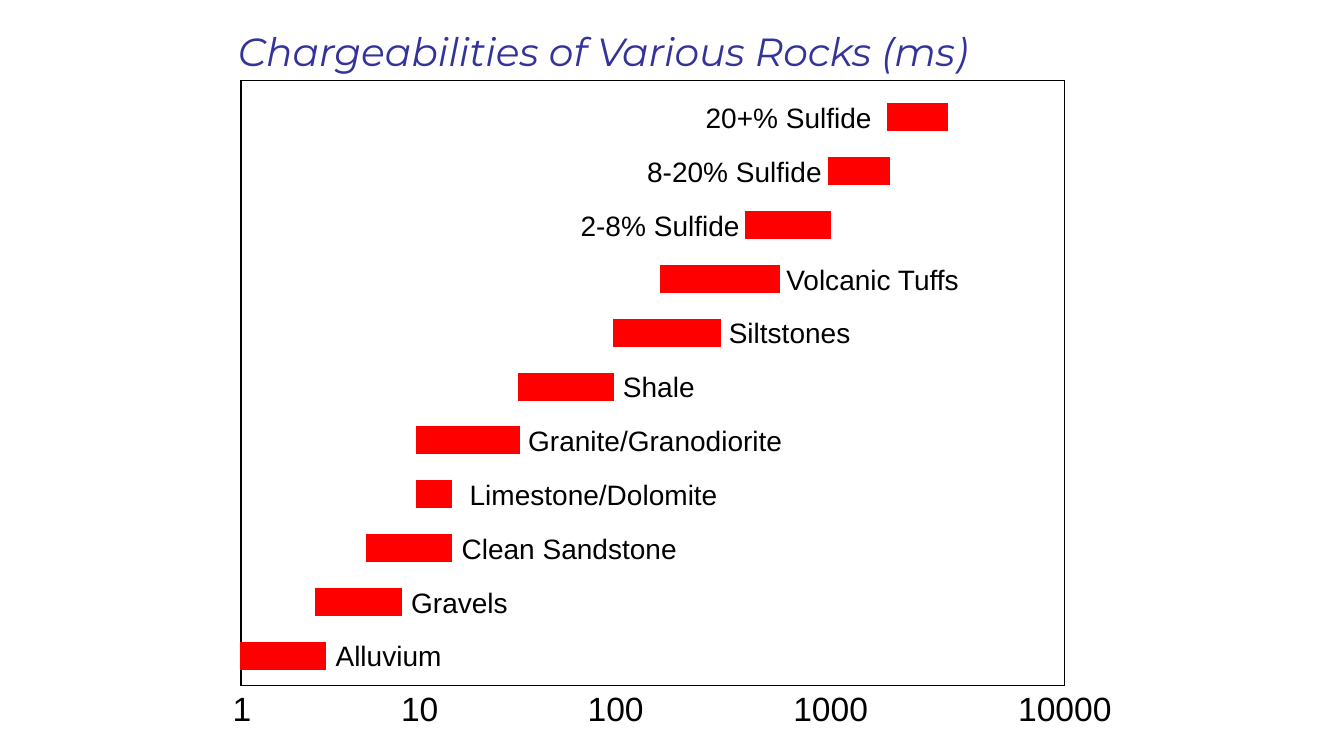
from dataclasses import dataclass

from lxml.etree import SubElement
from pptx import Presentation
from pptx.dml.color import RGBColor
from pptx.enum.shapes import MSO_SHAPE
from pptx.enum.text import MSO_ANCHOR, MSO_AUTO_SIZE, PP_ALIGN
from pptx.oxml.ns import qn
from pptx.util import Inches, Pt

TITLE = "Chargeabilities of Various Rocks (ms)"
ROCKS = [
    ("20+% Sulfide", 8.81, 0.58, 6.9, 1.85),
    ("8-20% Sulfide", 8.23, 0.58, 6.32, 1.93),
    ("2-8% Sulfide", 7.4, 0.83, 5.66, 1.78),
    ("Volcanic Tuffs", 6.56, 1.16, 7.7, 1.95),
    ("Siltstones", 6.09, 1.05, 7.13, 1.41),
    ("Shale", 5.15, 0.93, 6.08, 0.91),
    ("Granite/Granodiorite", 4.14, 1.0, 5.14, 2.72),
    ("Limestone/Dolomite", 4.14, 0.33, 4.56, 2.66),
    ("Clean Sandstone", 3.64, 0.83, 4.48, 2.35),
    ("Gravels", 3.14, 0.83, 3.98, 1.16),
    ("Alluvium", 2.39, 0.83, 3.23, 1.25),
]
TICKS = [
    ("1", 2.21, 0.39),
    ("10", 3.88, 0.57),
    ("100", 5.73, 0.76),
    ("1000", 7.77, 0.94),
    ("10000", 10.0, 1.13),
]
FIRST_BAR, LAST_BAR, BAR_HEIGHT = 1.04, 6.38, 0.25
LABEL_RISE = 0.09


@dataclass(frozen=True)
class Theme:
    title_font: str = "Montserrat"
    body_font: str = "Arial"
    title_size: int = 28
    tick_size: int = 24
    label_size: int = 20
    title_color: RGBColor = RGBColor(0x33, 0x33, 0x99)
    ink: RGBColor = RGBColor(0, 0, 0)
    bar: RGBColor = RGBColor(0xFF, 0, 0)


THEME = Theme()


def write(box, text, font, size, color, italic=False):
    frame = box.text_frame
    frame.text = text
    frame.word_wrap = False
    frame.auto_size = MSO_AUTO_SIZE.SHAPE_TO_FIT_TEXT
    frame.vertical_anchor = MSO_ANCHOR.TOP
    para = frame.paragraphs[0]
    para.alignment = PP_ALIGN.LEFT
    span = para.runs[0].font
    span.name, span.size, span.italic = font, Pt(size), italic
    span.color.rgb = color


def add_label(page, text, left, top, width, height, size):
    box = page.shapes.add_textbox(*map(Inches, (left, top, width, height)))
    write(box, text, THEME.body_font, size, THEME.ink)


def add_rectangle(page, left, top, width, height, line, weight, fill=None):
    shape = page.shapes.add_shape(
        MSO_SHAPE.RECTANGLE, *map(Inches, (left, top, width, height)))
    shape.shadow.inherit = False
    shape.line.color.rgb = line
    shape.line.width = Pt(weight)
    outline = shape.element.spPr.find(qn("a:ln"))
    SubElement(outline, qn("a:miter"), lim="800000")
    if fill is None:
        shape.fill.background()
    else:
        shape.fill.solid()
        shape.fill.fore_color.rgb = fill


def main():
    """Build the chargeability range slide."""
    deck = Presentation()
    deck.slide_width, deck.slide_height = Inches(13.33), Inches(7.5)
    page = deck.slides.add_slide(deck.slide_layouts[5])

    title = page.shapes.title
    title.left, title.top = Inches(2.26), Inches(0.22)
    title.width, title.height = Inches(8.44), Inches(0.57)
    write(title, TITLE, THEME.title_font, THEME.title_size,
          THEME.title_color, italic=True)

    add_rectangle(page, 2.39, 0.8, 8.17, 6, THEME.ink, 1)
    for text, left, width in TICKS:
        add_label(page, text, left, 6.78, width, 0.5, THEME.tick_size)

    pitch = (LAST_BAR - FIRST_BAR) / (len(ROCKS) - 1)
    for row, (rock, left, width, label_left, label_width) in enumerate(ROCKS):
        top = FIRST_BAR + row * pitch
        add_rectangle(page, left, top, width, BAR_HEIGHT,
                      THEME.bar, 2, THEME.bar)
        add_label(page, rock, label_left, top - LABEL_RISE, label_width,
                  0.43, THEME.label_size)

    deck.save("out.pptx")


if __name__ == "__main__":
    main()
